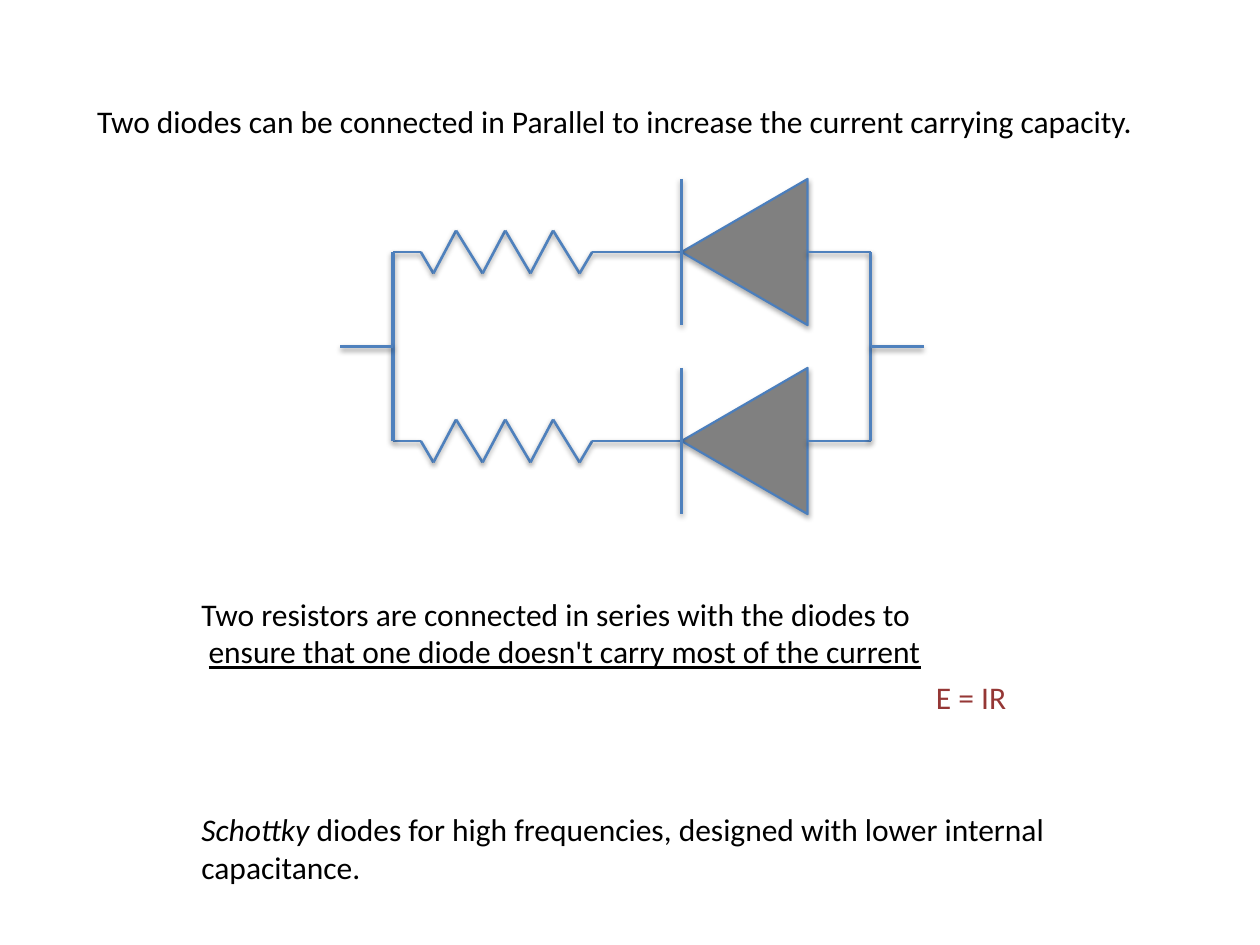
import itertools
from dataclasses import dataclass

import pptx
import pptx.dml.color
import pptx.enum.shapes
import pptx.enum.text
import pptx.oxml
import pptx.oxml.ns
import pptx.util

EMU_PER_PX = 9144  # 100 px to the inch


@dataclass(frozen=True)
class Theme:
    font: str = "Calibri"
    text_size: float = 18
    text: str = "000000"
    formula: str = "953735"
    wire: str = "4F81BD"
    diode_fill: str = "808080"
    diode_line: str = "4B7EBC"
    thin: float = 1.5
    thick: float = 2
    outline: float = 1.25


THEME = Theme()


def px(length):
    return pptx.util.Emu(round(length * EMU_PER_PX))


def color(value):
    return pptx.dml.color.RGBColor.from_string(value)


def add_shadow(shape, opacity, distance):
    """Cast a soft black shadow straight down; distance is in points."""
    effects = pptx.oxml.parse_xml(
        f'<a:effectLst {pptx.oxml.ns.nsdecls("a")}>'
        f'<a:outerShdw blurRad="{pptx.util.Pt(3.1)}" dist="{pptx.util.Pt(distance)}"'
        ' dir="5400000" rotWithShape="0"><a:srgbClr val="000000">'
        f'<a:alpha val="{opacity * 1000}"/></a:srgbClr></a:outerShdw></a:effectLst>'
    )
    shape._element.spPr.append(effects)


def add_path(slide, points, width=THEME.thin):
    """Join successive points with straight wires."""
    for start, end in itertools.pairwise(points):
        wire = slide.shapes.add_connector(
            pptx.enum.shapes.MSO_CONNECTOR.STRAIGHT, *map(px, start + end)
        )
        wire.line.color.rgb = color(THEME.wire)
        wire.line.width = pptx.util.Pt(width)
        add_shadow(wire, 38, 1.6)


def add_resistor(slide, left, middle):
    """Draw a zigzag, 136 px wide, around the height of its wire."""
    steps = (0, 10, 28, 49, 67, 87, 105, 126, 136)
    rises = (0, 17, -17, 17, -17, 17, -17, 17, 0)
    add_path(slide, [(left + x, middle + y) for x, y in zip(steps, rises)])


def add_diode(slide, left, middle, length=100, height=116):
    """Draw a triangle pointing left at its bar."""
    triangle = slide.shapes.add_shape(
        pptx.enum.shapes.MSO_SHAPE.ISOSCELES_TRIANGLE,
        px(left + (length - height) / 2), px(middle - length / 2),
        px(height), px(length),
    )
    triangle.rotation = 270
    triangle.fill.solid()
    triangle.fill.fore_color.rgb = color(THEME.diode_fill)
    triangle.line.color.rgb = color(THEME.diode_line)
    triangle.line.width = pptx.util.Pt(THEME.outline)
    add_shadow(triangle, 35, 1.8)
    add_path(slide, [(left, middle - height / 2), (left, middle + height / 2)])


def add_branch(slide, left, middle, width):
    resistor_left, resistor_right = left + 22, left + 158
    diode_left, diode_right = left + 229, left + 329
    add_path(slide, [(left, middle), (resistor_left, middle)])
    add_resistor(slide, resistor_left, middle)
    add_path(slide, [(resistor_right, middle), (diode_left, middle)])
    add_diode(slide, diode_left, middle)
    add_path(slide, [(diode_right, middle), (left + width, middle)])


def add_circuit(slide, left, top, width, height):
    lead, diode_half = 42, 58
    rail_left, rail_right = left + lead, left + width - lead
    upper, lower = top + diode_half, top + height - diode_half
    middle = (upper + lower) / 2
    for branch in (upper, lower):
        add_branch(slide, rail_left, branch, rail_right - rail_left)
    for rail, outer in ((rail_left, left), (rail_right, left + width)):
        add_path(slide, [(rail, upper), (rail, lower)], THEME.thick)
        add_path(slide, [(rail, middle), (outer, middle)], THEME.thick)


def write_text(shape, paragraphs, text_color=THEME.text, wrap=True):
    """Fill a shape with paragraphs of (text, font attributes) runs."""
    frame = shape.text_frame
    frame.word_wrap = wrap
    frame.auto_size = pptx.enum.text.MSO_AUTO_SIZE.NONE
    frame.vertical_anchor = pptx.enum.text.MSO_ANCHOR.TOP
    for index, runs in enumerate(paragraphs):
        paragraph = frame.add_paragraph() if index else frame.paragraphs[0]
        paragraph.alignment = pptx.enum.text.PP_ALIGN.LEFT
        for text, attributes in runs:
            run = paragraph.add_run()
            run.text = text
            run.font.name = THEME.font
            run.font.size = pptx.util.Pt(THEME.text_size)
            run.font.color.rgb = color(text_color)
            for name, value in attributes.items():
                setattr(run.font, name, value)


def add_title(slide, box, text):
    title = slide.shapes.title
    title.left, title.top, title.width, title.height = map(px, box)
    write_text(title, [[(text, {})]], wrap=False)


def add_note(slide, box, paragraphs, **style):
    write_text(slide.shapes.add_textbox(*map(px, box)), paragraphs, **style)


def build_diode_slide(presentation):
    slide = presentation.slides.add_slide(
        presentation.slide_layouts.get_by_name("Title Only")
    )
    add_title(
        slide, (67, 76, 846, 40),
        "Two diodes can be connected in Parallel to increase the current carrying capacity.",
    )
    add_circuit(slide, 270, 142, 463, 266)
    add_note(slide, (150, 467, 819, 125), [
        [("Two resistors are connected in series with the diodes to", {})],
        [(" ", {}),
         ("ensure that one diode doesn't carry most of the current", {"underline": True})],
    ])
    add_note(slide, (150, 638, 756, 71), [
        [("Schottky ", {"italic": True}),
         ("diodes for high frequencies, designed with lower internal capacitance.", {})],
    ])
    add_note(slide, (733, 533, 77, 40), [[("E = IR", {})]],
             text_color=THEME.formula, wrap=False)


def main():
    presentation = pptx.Presentation()
    presentation.slide_width, presentation.slide_height = px(1000), px(750)
    build_diode_slide(presentation)
    presentation.save("out.pptx")


if __name__ == "__main__":
    main()
